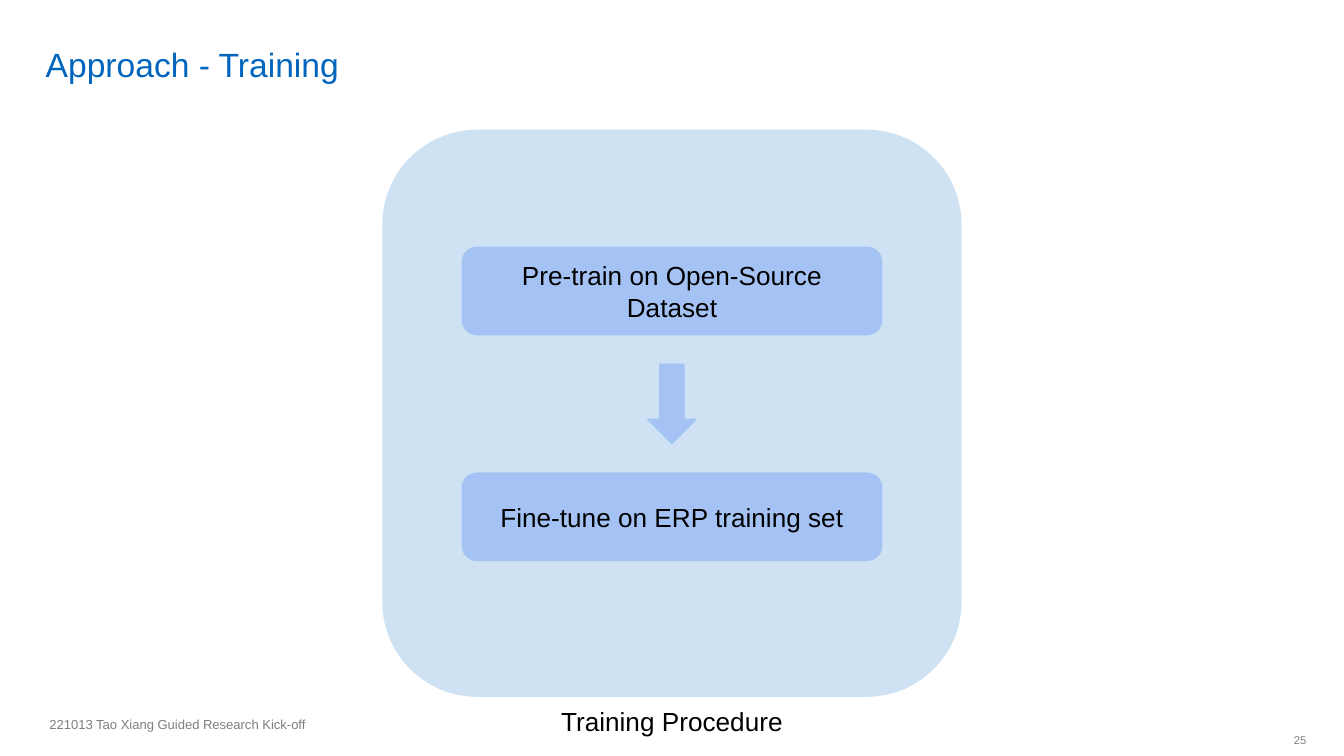
import pptx
import pptx.util
import pptx.dml.color
import pptx.enum.shapes
import pptx.enum.text

Inches = pptx.util.Inches
Pt = pptx.util.Pt
Align = pptx.enum.text.PP_ALIGN
Anchor = pptx.enum.text.MSO_ANCHOR
Shape = pptx.enum.shapes.MSO_SHAPE

COLORS = {
    "title": "0065BD",
    "panel": "CFE2F3",
    "step": "A4C2F4",
    "text": "000000",
    "footer": "7F7F7F",
}


def write_text(box, text, size, color, align, anchor, margins):
    frame = box.text_frame
    frame.word_wrap = True
    frame.auto_size = pptx.enum.text.MSO_AUTO_SIZE.NONE
    frame.vertical_anchor = anchor
    frame.margin_left, frame.margin_top, frame.margin_right, frame.margin_bottom = map(Inches, margins)
    paragraph = frame.paragraphs[0]
    paragraph.alignment = align
    span = paragraph.add_run()
    span.text = text
    span.font.name = "Arial"
    span.font.size = Pt(size)
    span.font.color.rgb = pptx.dml.color.RGBColor.from_string(COLORS[color])


def add_block(page, kind, bounds, color):
    block = page.shapes.add_shape(kind, *map(Inches, bounds))
    block.shadow.inherit = False
    fill_color = pptx.dml.color.RGBColor.from_string(COLORS[color])
    block.fill.solid()
    block.fill.fore_color.rgb = fill_color
    block.line.color.rgb = fill_color
    block.line.width = Pt(0.75)
    return block


deck = pptx.Presentation()
deck.slide_width = Inches(10)
deck.slide_height = deck.slide_width * 9 // 16
page = deck.slides.add_slide(deck.slide_layouts[5])

title = page.shapes.title
title.left, title.top, title.width, title.height = map(Inches, (0.27, 0.04, 8.68, 0.59))
write_text(title, "Approach - Training", 18, "title", Align.LEFT, Anchor.BOTTOM, (0.07, 0, 0.07, 0))

caption = page.shapes.add_textbox(*map(Inches, (2.86, 5.15, 4.28, 0.44)))
write_text(caption, "Training Procedure", 14, "text", Align.CENTER, Anchor.TOP, (0.1, 0.1, 0.1, 0.1))

add_block(page, Shape.ROUNDED_RECTANGLE, (2.85, 0.97, 4.3, 4.21), "panel")

steps = [
    (1.84, "Pre-train on Open-Source Dataset"),
    (3.52, "Fine-tune on ERP training set"),
]
for top, text in steps:
    step = add_block(page, Shape.ROUNDED_RECTANGLE, (3.44, top, 3.12, 0.65), "step")
    write_text(step, text, 14, "text", Align.CENTER, Anchor.MIDDLE, (0.1, 0.1, 0.1, 0.1))

add_block(page, Shape.DOWN_ARROW, (4.82, 2.71, 0.36, 0.59), "step")

footers = [
    ((9.45, 5.39, 0.27, 0.24), "25", 6, Align.RIGHT, (0.07, 0.04, 0, 0.04)),
    ((0.27, 5.23, 6.3, 0.32), "221013 Tao Xiang Guided Research Kick-off", 7,
     Align.LEFT, (0.1, 0.05, 0.1, 0.05)),
]
for bounds, text, size, align, margins in footers:
    footer = page.shapes.add_textbox(*map(Inches, bounds))
    write_text(footer, text, size, "footer", align, Anchor.MIDDLE, margins)

deck.save("out.pptx")
